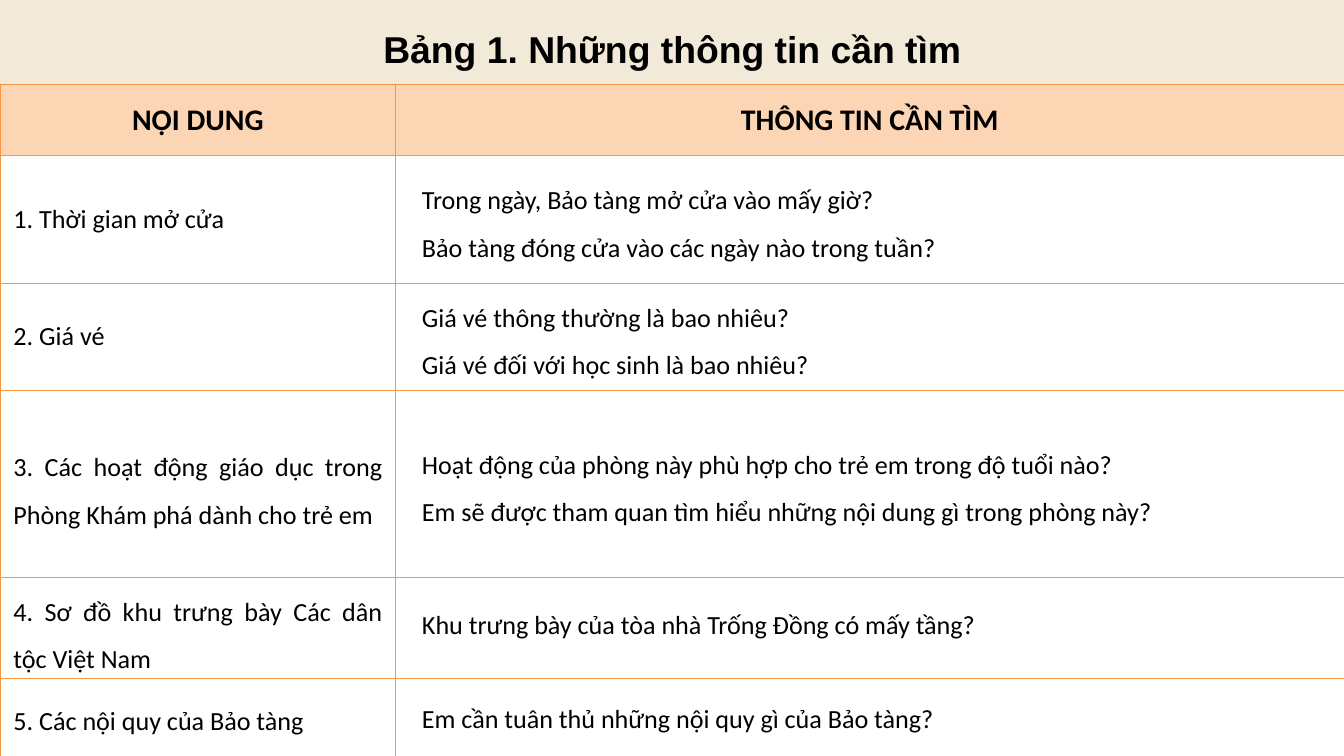
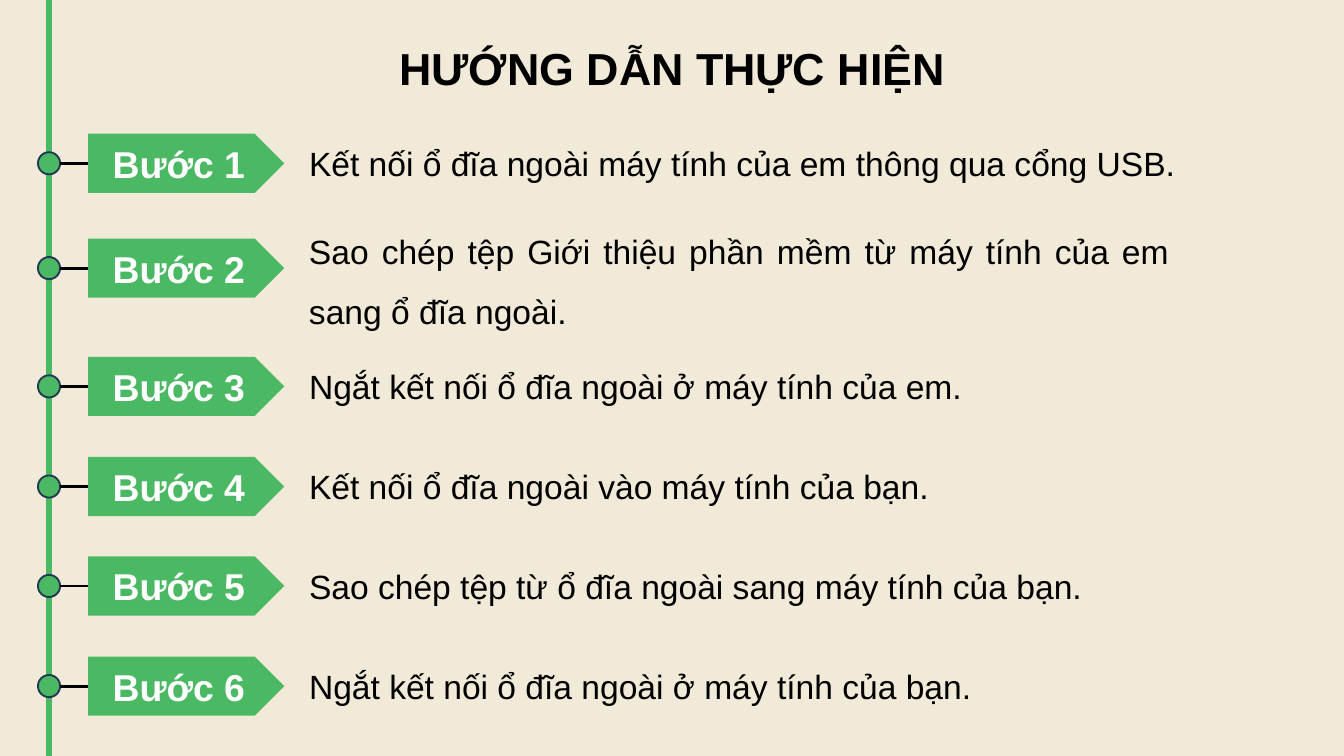
from lxml.etree import SubElement
from pptx import Presentation
from pptx.dml.color import RGBColor
from pptx.enum.shapes import MSO_CONNECTOR, MSO_SHAPE
from pptx.enum.text import MSO_ANCHOR, MSO_AUTO_SIZE, PP_ALIGN
from pptx.oxml.ns import qn
from pptx.util import Inches, Pt

CREAM = RGBColor(0xF1, 0xEA, 0xD8)
PEACH = RGBColor(0xFC, 0xD5, 0xB5)
ORANGE = RGBColor(0xF7, 0x96, 0x46)
GREEN = RGBColor(0x4B, 0xB9, 0x63)
NAVY = RGBColor(0x23, 0x39, 0x53)
BLACK = RGBColor(0, 0, 0)
WHITE = RGBColor(0xFF, 0xFF, 0xFF)

SLIDE_W, SLIDE_H = 20, 11.25

HEADERS = ["NỘI DUNG", "THÔNG TIN CẦN TÌM"]
TOPICS = [
    ("1. Thời gian mở cửa", [
        "Trong ngày, Bảo tàng mở cửa vào mấy giờ?",
        "Bảo tàng đóng cửa vào các ngày nào trong tuần?"]),
    ("2. Giá vé", [
        "Giá vé thông thường là bao nhiêu?",
        "Giá vé đối với học sinh là bao nhiêu?"]),
    ("3. Các hoạt động giáo dục trong Phòng Khám phá dành cho trẻ em", [
        "Hoạt động của phòng này phù hợp cho trẻ em trong độ tuổi nào?",
        "Em sẽ được tham quan tìm hiểu những nội dung gì trong phòng này?"]),
    ("4. Sơ đồ khu trưng bày Các dân tộc Việt Nam", [
        "Khu trưng bày của tòa nhà Trống Đồng có mấy tầng?"]),
    ("5. Các nội quy của Bảo tàng", [
        "Em cần tuân thủ những nội quy gì của Bảo tàng?"]),
]
COLUMN_WIDTHS = [5.89, 14.11]
ROW_HEIGHTS = [1.07, 1.9, 1.52, 2.79, 1.43, 1.29]
WRAPPING_LENGTH = 40

HEADER_MARGINS = (0.07, 0.04, 0.07, 0.04)
TOPIC_MARGINS = (0.2, 0.04, 0.2, 0.04)
QUESTION_MARGINS = (0.39, 0.04, 0.12, 0.12)

JUSTIFY, LEFT = PP_ALIGN.JUSTIFY, PP_ALIGN.LEFT
STEPS = [
    (2.43, 14.91, 0.71, JUSTIFY, None,
     "Kết nối ổ đĩa ngoài máy tính của em thông qua cổng USB."),
    (3.99, 13, 1.81, JUSTIFY, 1.5,
     "Sao chép tệp Giới thiệu phần mềm từ máy tính của em sang ổ đĩa ngoài."),
    (5.75, 11.41, 0.71, JUSTIFY, None,
     "Ngắt kết nối ổ đĩa ngoài ở máy tính của em."),
    (7.24, 11.75, 0.71, LEFT, None,
     "Kết nối ổ đĩa ngoài vào máy tính của bạn."),
    (8.72, 11.75, 0.71, LEFT, None,
     "Sao chép tệp từ ổ đĩa ngoài sang máy tính của bạn."),
    (10.21, 11.75, 0.71, LEFT, None,
     "Ngắt kết nối ổ đĩa ngoài ở máy tính của bạn."),
]
RAIL_X = 0.73
DOT = 0.33
TAG_X, TAG_W, TAG_H = 1.31, 2.92, 0.88
STEP_TEXT_X = 4.5


def write(tf, lines, size, font="Arial", color=BLACK, bold=False,
          align=PP_ALIGN.CENTER, spacing=None):
    for i, line in enumerate(lines):
        p = tf.add_paragraph() if i else tf.paragraphs[0]
        p.alignment = align
        if spacing:
            p.line_spacing = spacing
        r = p.add_run()
        r.text = line
        r.font.name = font
        r.font.size = Pt(size)
        r.font.bold = bold
        r.font.color.rgb = color


def add_titled_slide(prs, text, box, size):
    s = prs.slides.add_slide(prs.slide_layouts[5])
    title = s.shapes.title
    title.left, title.top, title.width, title.height = map(Inches, box)
    title.text_frame.vertical_anchor = MSO_ANCHOR.MIDDLE
    write(title.text_frame, [text], size, bold=True)
    return s


def add_line(s, x1, y1, x2, y2, color, width):
    line = s.shapes.add_connector(
        MSO_CONNECTOR.STRAIGHT, *map(Inches, (x1, y1, x2, y2)))
    line.line.color.rgb = color
    line.line.width = Pt(width)
    SubElement(line._element.spPr, qn("a:effectLst"))


def add_solid(s, kind, x, y, w, h):
    sp = s.shapes.add_shape(kind, *map(Inches, (x, y, w, h)))
    sp.shadow.inherit = False
    sp.fill.solid()
    sp.fill.fore_color.rgb = GREEN
    sp.line.fill.background()
    return sp


def style_cell(cell, fill, margins):
    tc_pr = cell._tc.get_or_add_tcPr()
    for side in ("a:lnL", "a:lnR", "a:lnT", "a:lnB"):
        ln = SubElement(tc_pr, qn(side), w=str(Pt(1)))
        SubElement(SubElement(ln, qn("a:solidFill")), qn("a:srgbClr"), val=str(ORANGE))
    cell.fill.solid()
    cell.fill.fore_color.rgb = fill
    cell.vertical_anchor = MSO_ANCHOR.MIDDLE
    (cell.margin_left, cell.margin_top,
     cell.margin_right, cell.margin_bottom) = map(Inches, margins)


def add_topic_table(s, x, y, w, h):
    table = s.shapes.add_table(
        len(ROW_HEIGHTS), len(COLUMN_WIDTHS), *map(Inches, (x, y, w, h))).table
    for column, width in zip(table.columns, COLUMN_WIDTHS):
        column.width = Inches(width)
    for row, height in zip(table.rows, ROW_HEIGHTS):
        row.height = Inches(height)
    for cell, header in zip(table.rows[0].cells, HEADERS):
        style_cell(cell, PEACH, HEADER_MARGINS)
        write(cell.text_frame, [header], 32, "Calibri", bold=True)
    for i, (topic, questions) in enumerate(TOPICS, 1):
        columns = [
            ([topic], TOPIC_MARGINS, len(topic) > WRAPPING_LENGTH),
            (questions, QUESTION_MARGINS, len(questions) > 1),
        ]
        for j, (lines, margins, multiline) in enumerate(columns):
            cell = table.cell(i, j)
            style_cell(cell, WHITE, margins)
            write(cell.text_frame, lines, 28, "Calibri", align=JUSTIFY,
                  spacing=1.5 if multiline else None)


def add_step(s, number, center, width, height, align, spacing, text):
    tag = add_solid(s, MSO_SHAPE.PENTAGON, TAG_X, center - TAG_H / 2, TAG_W, TAG_H)
    tag.text_frame.vertical_anchor = MSO_ANCHOR.MIDDLE
    write(tag.text_frame, [f"Bước {number}"], 40, color=WHITE, bold=True)
    dot = add_solid(s, MSO_SHAPE.FLOWCHART_CONNECTOR,
                    RAIL_X - DOT / 2, center - DOT / 2, DOT, DOT)
    dot.line.color.rgb = NAVY
    dot.line.width = Pt(2)
    add_line(s, RAIL_X + DOT / 2, center, TAG_X, center, BLACK, 3)
    box = s.shapes.add_textbox(
        *map(Inches, (STEP_TEXT_X, center - height / 2, width, height)))
    tf = box.text_frame
    tf.word_wrap = True
    tf.auto_size = MSO_AUTO_SIZE.SHAPE_TO_FIT_TEXT
    write(tf, [text], 36, align=align, spacing=spacing)


def build_topics_slide(prs):
    s = add_titled_slide(prs, "Bảng 1. Những thông tin cần tìm",
                         (0.67, 0.22, 18.67, 1), 40)
    add_topic_table(s, 0, 1.25, SLIDE_W, 10)


def build_steps_slide(prs):
    s = add_titled_slide(prs, "HƯỚNG DẪN THỰC HIỆN", (4.91, 0.38, 10.19, 1.25), 48)
    add_line(s, RAIL_X, 0, RAIL_X, SLIDE_H, GREEN, 6)
    for number, step in enumerate(STEPS, 1):
        add_step(s, number, *step)


def main():
    prs = Presentation()
    prs.slide_width, prs.slide_height = Inches(SLIDE_W), Inches(SLIDE_H)
    background = prs.slide_master.background.fill
    background.solid()
    background.fore_color.rgb = CREAM
    build_topics_slide(prs)
    build_steps_slide(prs)
    prs.save("out.pptx")


if __name__ == "__main__":
    main()
